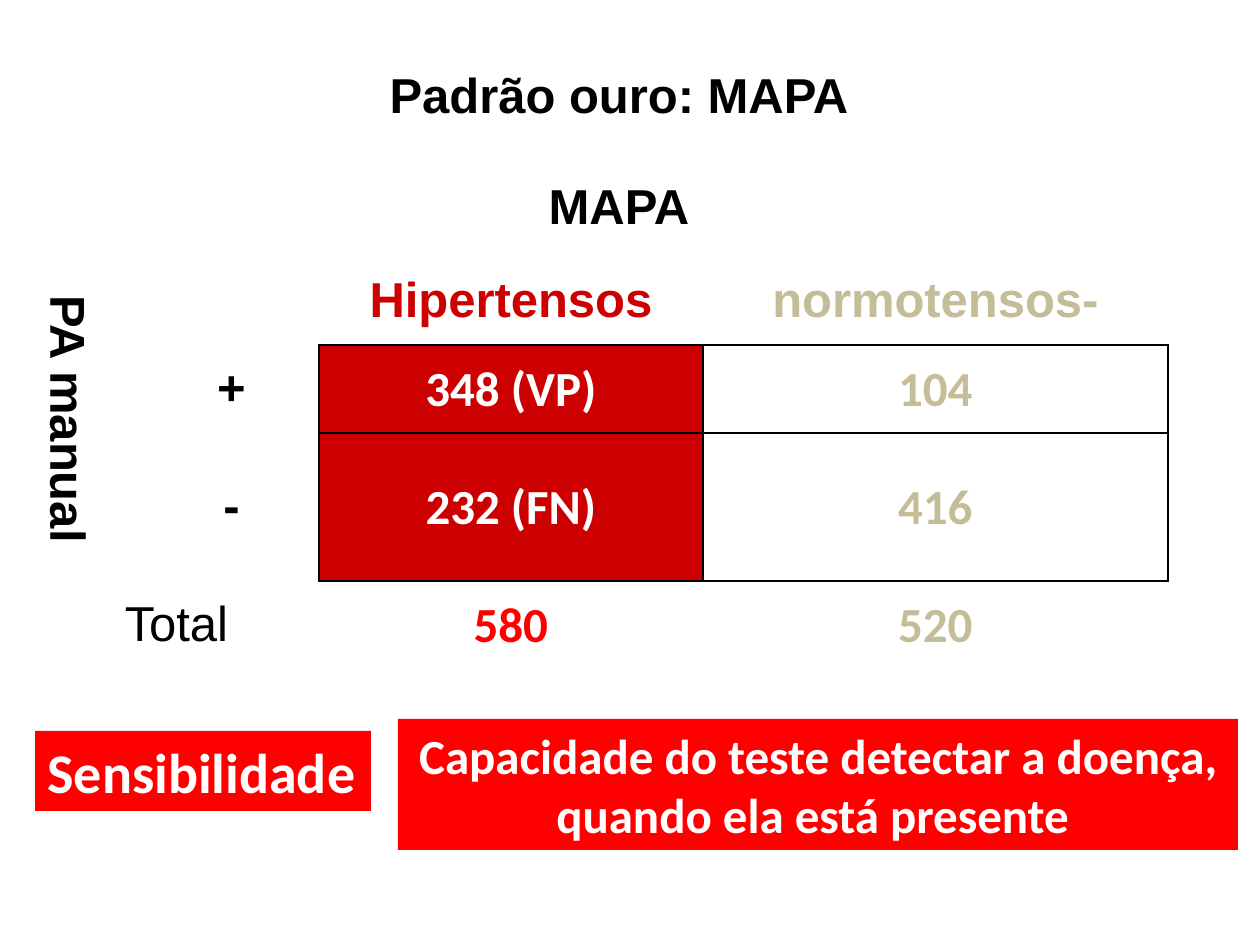
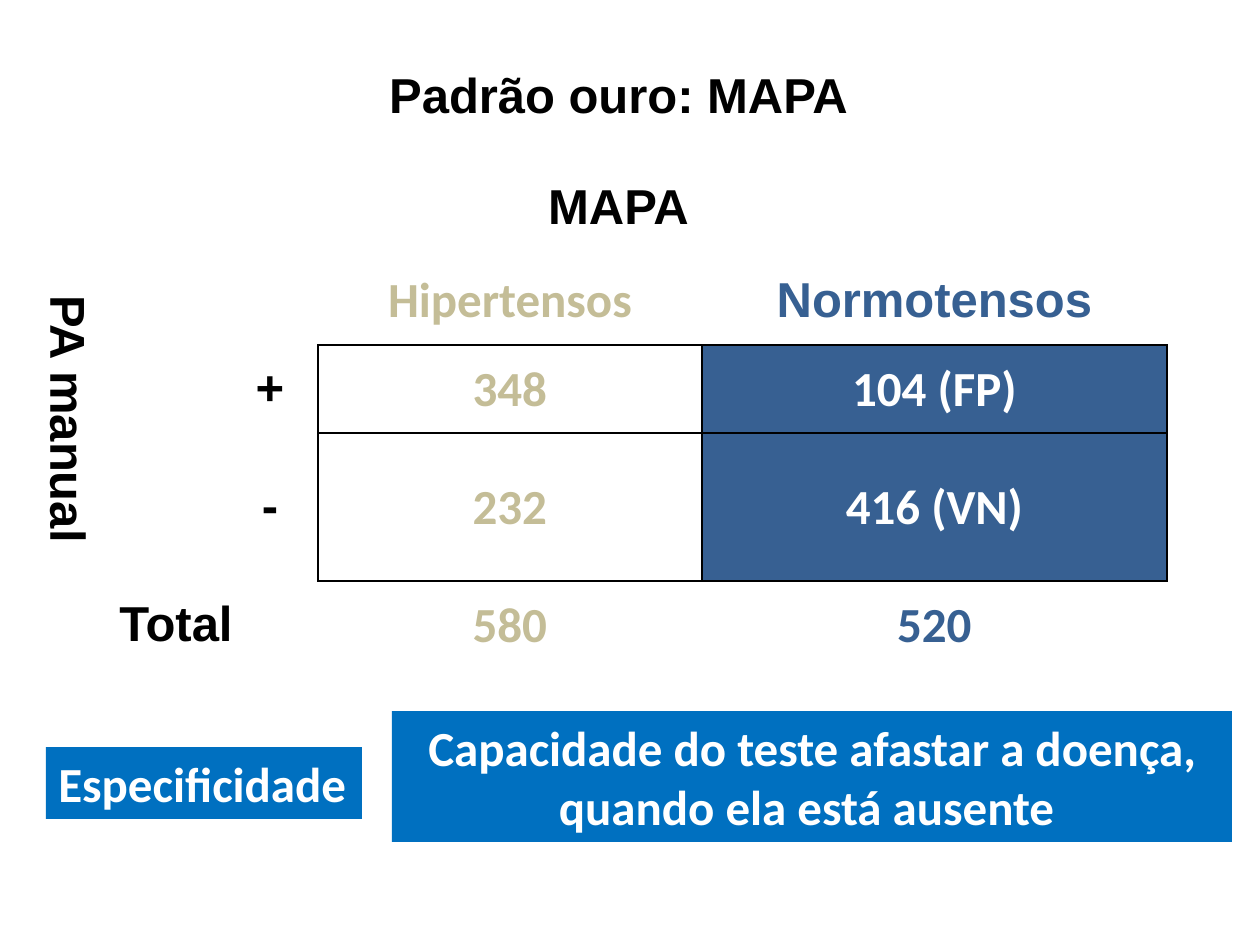
import pptx
import pptx.util
import pptx.dml.color
import pptx.enum.text
import pptx.oxml.ns
from lxml import etree

SCALE = 914400 / 126  # EMU in one px
COLORS = {"black": "000000", "white": "FFFFFF", "dark": "CC0000", "red": "FF0000",
          "sand": "C4BD97", "navy": "376092", "blue": "0070C0"}
ANCHOR = pptx.enum.text.MSO_ANCHOR
ALIGN = pptx.enum.text.PP_ALIGN
FIT = pptx.enum.text.MSO_AUTO_SIZE.SHAPE_TO_FIT_TEXT
NO_STYLE = "{2D5ABB26-0587-4C30-8999-92F81FD0307C}"

ROWS = [124, 98, 88, 88, 148, 88]
BOX = {(3, 2), (3, 3), (4, 2), (4, 3)}  # the four counted cells
SIDES = {"lnL": (0, -1), "lnR": (0, 1), "lnT": (-1, 0), "lnB": (1, 0)}
SPANS = [((0, 0), (0, 4)), ((1, 0), (1, 4)), ((2, 0), (4, 0)), ((5, 0), (5, 1))]
WIDE = {"margin_left": 13, "margin_right": 13, "margin_top": 6, "margin_bottom": 6}
TIGHT = {"margin_left": 1, "margin_right": 1, "margin_top": 1, "margin_bottom": 0}

# Text, colour and font of each filled cell
LABELS = {(0, 0): ("Padrão ouro: MAPA", "black", "Arial"),
          (1, 0): ("MAPA", "black", "Arial"),
          (2, 0): ("PA manual", "black", "Arial"),
          (3, 1): ("+", "black", "Arial"),
          (4, 1): ("-", "black", "Arial"),
          (5, 0): ("Total", "black", "Arial")}

SLIDES = [
    {"cols": [110, 175, 384, 465, 36], "bold_total": False,
     "cells": {(2, 2): ("Hipertensos", "dark", "Arial"),
               (2, 3): ("normotensos-", "sand", "Arial"),
               (3, 2): ("348 (VP)", "white", "Calibri"),
               (3, 3): ("104", "sand", "Calibri"),
               (4, 2): ("232 (FN)", "white", "Calibri"),
               (4, 3): ("416", "sand", "Calibri"),
               (5, 2): ("580", "red", "Calibri"),
               (5, 3): ("520", "sand", "Calibri")},
     "focus": 2, "fill": "dark", "band": "red",
     "notes": [("Sensibilidade", 32, (35, 731, 336, 80), False),
               ("Capacidade do teste detectar a doença, quando ela está presente ",
                28, (398, 719, 840, 131), True)]},
    {"cols": [188, 96, 384, 465, 36], "bold_total": True,
     "cells": {(2, 2): ("Hipertensos", "sand", "Calibri"),
               (2, 3): ("Normotensos", "navy", "Arial"),
               (3, 2): ("348", "sand", "Calibri"),
               (3, 3): ("104 (FP)", "white", "Calibri"),
               (4, 2): ("232", "sand", "Calibri"),
               (4, 3): ("416 (VN)", "white", "Calibri"),
               (5, 2): ("580", "sand", "Calibri"),
               (5, 3): ("520", "navy", "Calibri")},
     "focus": 3, "fill": "navy", "band": "blue",
     "notes": [("Especificidade", 28, (46, 747, 316, 72), False),
               ("Capacidade do teste afastar a doença, quando ela está ausente ",
                28, (392, 711, 840, 131), True)]},
]


def px(num):
    return pptx.util.Emu(round(num * SCALE))


def write(frame, text, color, font, size=28, bold=True, align=ALIGN.CENTER):
    """Put one formatted run into the first paragraph of the frame."""
    par = frame.paragraphs[0]
    par.alignment = align
    run = par.add_run()
    run.text = text
    style = {"name": font, "size": pptx.util.Pt(size), "bold": bold}
    for key, val in style.items():
        setattr(run.font, key, val)
    run.font.color.rgb = pptx.dml.color.RGBColor.from_string(COLORS[color])


deck = pptx.Presentation()
deck.slide_width, deck.slide_height = px(1260), px(945)

for page in SLIDES:
    slide = deck.slides.add_slide(deck.slide_layouts[6])

    # Two-by-two table with its headings and totals
    cols = page["cols"]
    frame = slide.shapes.add_table(len(ROWS), len(cols), px(34), px(35),
                                   px(sum(cols)), px(sum(ROWS)))
    table = frame.table
    table.first_row = table.horz_banding = False
    table._tbl.tblPr.find(pptx.oxml.ns.qn("a:tableStyleId")).text = NO_STYLE
    for col, width in zip(table.columns, cols):
        col.width = px(width)
    for row, height in zip(table.rows, ROWS):
        row.height = px(height)
    for start, end in SPANS:
        table.cell(*start).merge(table.cell(*end))

    texts = {**LABELS, **page["cells"]}
    for r in range(len(ROWS)):
        for c in range(len(cols)):
            cell, spot = table.cell(r, c), (r, c)
            cell.vertical_anchor = ANCHOR.MIDDLE
            tight = r > 2 and c in (2, 3)
            for key, val in (TIGHT if tight else WIDE).items():
                setattr(cell, key, px(val))

            # An edge is drawn when it touches one of the four counted cells
            props = cell._tc.get_or_add_tcPr()
            for tag, (down, right) in SIDES.items():
                if spot in BOX or (r + down, c + right) in BOX:
                    line = etree.SubElement(props, pptx.oxml.ns.qn("a:" + tag), w="12700")
                    solid = etree.SubElement(line, pptx.oxml.ns.qn("a:solidFill"))
                    etree.SubElement(solid, pptx.oxml.ns.qn("a:srgbClr"), val=COLORS["black"])

            focus = spot in BOX and c == page["focus"]
            shade = page["fill"] if focus else "white"
            cell.fill.solid()
            cell.fill.fore_color.rgb = pptx.dml.color.RGBColor.from_string(COLORS[shade])
            if spot in texts:
                bold = page["bold_total"] if spot == (5, 0) else True
                write(cell.text_frame, *texts[spot], bold=bold)
    table.cell(2, 0)._tc.get_or_add_tcPr().set("vert", "vert")

    # Term and its meaning below the table
    for text, size, place, wrap in page["notes"]:
        note = slide.shapes.add_textbox(*map(px, place))
        note.fill.solid()
        note.fill.fore_color.rgb = pptx.dml.color.RGBColor.from_string(COLORS[page["band"]])
        for key, val in {"word_wrap": wrap, "auto_size": FIT}.items():
            setattr(note.text_frame, key, val)
        write(note.text_frame, text, "white", "Calibri", size,
              align=ALIGN.CENTER if wrap else ALIGN.LEFT)

deck.save("out.pptx")
